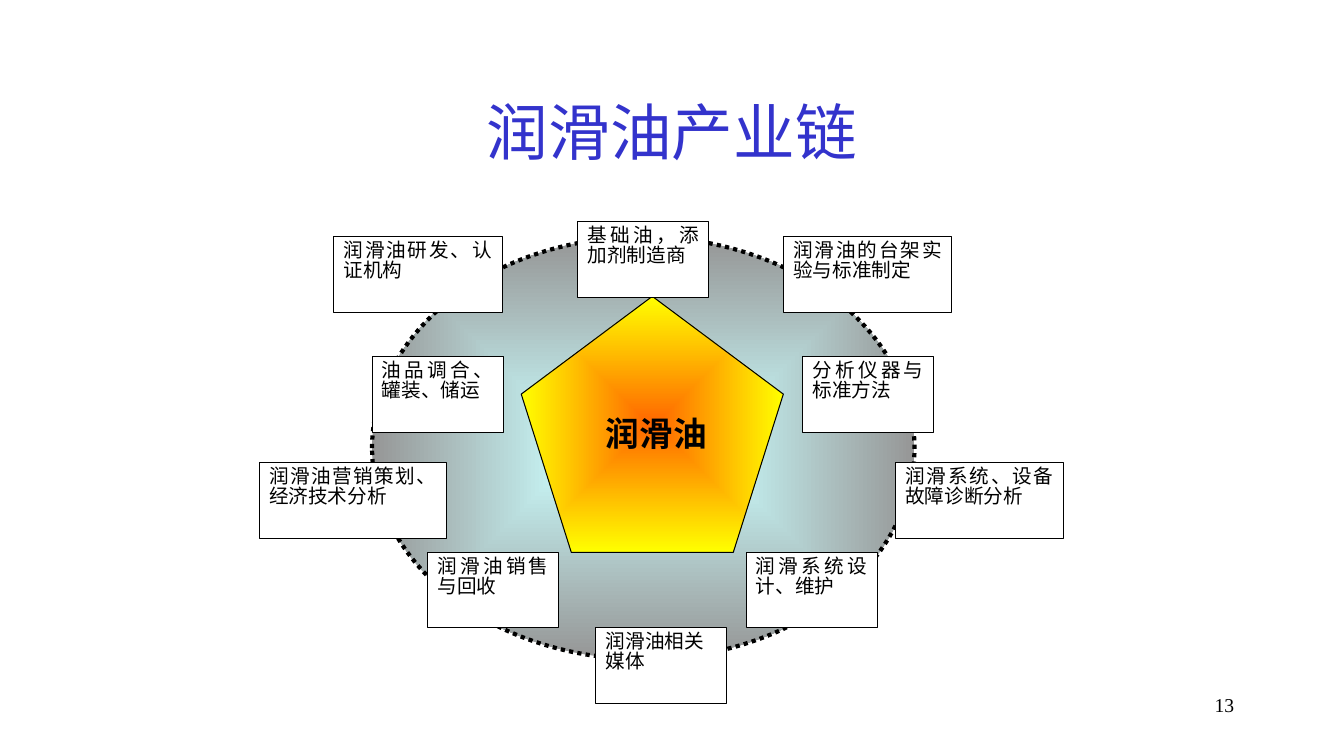
from typing import NamedTuple

from lxml.etree import SubElement
from pptx import Presentation
from pptx.dml.color import RGBColor
from pptx.enum.dml import MSO_LINE
from pptx.enum.shapes import MSO_SHAPE
from pptx.enum.text import MSO_ANCHOR, PP_ALIGN
from pptx.oxml.ns import qn
from pptx.shapes.autoshape import Shape
from pptx.shapes.shapetree import GroupShapes
from pptx.util import Inches, Pt

BLACK = RGBColor(0x00, 0x00, 0x00)
WHITE = RGBColor(0xFF, 0xFF, 0xFF)
TITLE_BLUE = RGBColor(0x33, 0x33, 0xCC)
PALE_CYAN = RGBColor(0xCC, 0xFF, 0xFF)
GREY = RGBColor(0x96, 0x96, 0x96)
ORANGE = RGBColor(0xFF, 0x66, 0x00)
YELLOW = RGBColor(0xFF, 0xFF, 0x00)
CJK = "Noto Sans CJK SC"
SERIF = "Times New Roman"

NARROW, MEDIUM, WIDE = 1.3, 1.67, 1.86
BOX_HEIGHT = 0.75


class Box(NamedTuple):
    left: float
    top: float
    width: float
    text: str


BOXES = [
    Box(5.73, 2.2, NARROW, "基础油，添加剂制造商"),
    Box(7.96, 3.54, NARROW, "分析仪器与标准方法"),
    Box(3.69, 3.54, NARROW, "油品调合、罐装、储运"),
    Box(4.24, 5.48, NARROW, "润滑油销售与回收"),
    Box(7.4, 5.48, NARROW, "润滑系统设计、维护"),
    Box(7.77, 2.35, MEDIUM, "润滑油的台架实验与标准制定"),
    Box(8.88, 4.59, MEDIUM, "润滑系统、设备故障诊断分析"),
    Box(3.31, 2.35, MEDIUM, "润滑油研发、认证机构"),
    Box(5.91, 6.23, NARROW, "润滑油相关\n媒体"),
    Box(2.57, 4.59, WIDE, "润滑油营销策划、经济技术分析"),
]


def write(sp: Shape, text: str, *, size: float = 14, font: str = CJK,
          color: RGBColor = BLACK, bold: bool = False,
          align: PP_ALIGN = PP_ALIGN.JUSTIFY, spacing: float = 1.0,
          anchor: MSO_ANCHOR = MSO_ANCHOR.TOP) -> None:
    tf = sp.text_frame
    tf.word_wrap = True
    tf.vertical_anchor = anchor
    tf.text = text
    for p in tf.paragraphs:
        p.alignment = align
        p.line_spacing = spacing
        for r in p.runs:
            r.font.size = Pt(size)
            r.font.bold = bold
            r.font.color.rgb = color
            r.font.name = font
            SubElement(r.font._element, qn("a:ea")).set("typeface", CJK)


def add_outlined(shapes: GroupShapes, kind: MSO_SHAPE, left: float, top: float,
                 width: float, height: float, line_width: float = 0.75) -> Shape:
    sp = shapes.add_shape(kind, Inches(left), Inches(top), Inches(width), Inches(height))
    sp.shadow.inherit = False
    sp.line.color.rgb = BLACK
    sp.line.width = Pt(line_width)
    return sp


def fill_from_center(sp: Shape, inner: RGBColor, outer: RGBColor) -> None:
    sp.fill.gradient()
    for stop, color in zip(sp.fill.gradient_stops, (inner, outer)):
        stop.color.rgb = color
    grad = sp._element.spPr.find(qn("a:gradFill"))
    grad.remove(grad.find(qn("a:lin")))
    shade = SubElement(grad, qn("a:path"))
    shade.set("path", "shape")
    center = SubElement(shade, qn("a:fillToRect"))
    for side in "ltrb":
        center.set(side, "50000")


def add_box(shapes: GroupShapes, box: Box) -> None:
    sp = add_outlined(shapes, MSO_SHAPE.RECTANGLE, box.left, box.top, box.width, BOX_HEIGHT)
    sp.fill.solid()
    sp.fill.fore_color.rgb = WHITE
    write(sp, box.text, spacing=0.85)


def main() -> None:
    prs = Presentation()
    prs.slide_width, prs.slide_height = Inches(13.33), Inches(7.5)
    slide = prs.slides.add_slide(prs.slide_layouts[5])

    title = slide.shapes.title
    title.left, title.top = Inches(1), Inches(0.67)
    title.width, title.height = Inches(11.33), Inches(1.25)
    write(title, "润滑油产业链", size=44, color=TITLE_BLUE,
          align=PP_ALIGN.CENTER, anchor=MSO_ANCHOR.MIDDLE)

    number = slide.shapes.add_textbox(Inches(9.56), Inches(6.83), Inches(2.78), Inches(0.5))
    write(number, "13", font=SERIF, align=PP_ALIGN.RIGHT)

    chain = slide.shapes.add_group_shape().shapes
    ring = add_outlined(chain, MSO_SHAPE.OVAL, 3.69, 2.35, 5.38, 4.19, line_width=3)
    ring.line.dash_style = MSO_LINE.ROUND_DOT
    fill_from_center(ring, PALE_CYAN, GREY)
    core = add_outlined(chain, MSO_SHAPE.REGULAR_PENTAGON, 5.17, 2.94, 2.6, 2.54)
    fill_from_center(core, ORANGE, YELLOW)

    for box in BOXES:
        add_box(chain, box)

    label = chain.add_textbox(Inches(5.91), Inches(4.14), Inches(1.3), Inches(0.6))
    label.text_frame.margin_left = label.text_frame.margin_top = 0
    write(label, "润滑油", size=24, font=SERIF, bold=True,
          align=PP_ALIGN.CENTER, spacing=0.9)

    prs.save("out.pptx")


if __name__ == "__main__":
    main()
